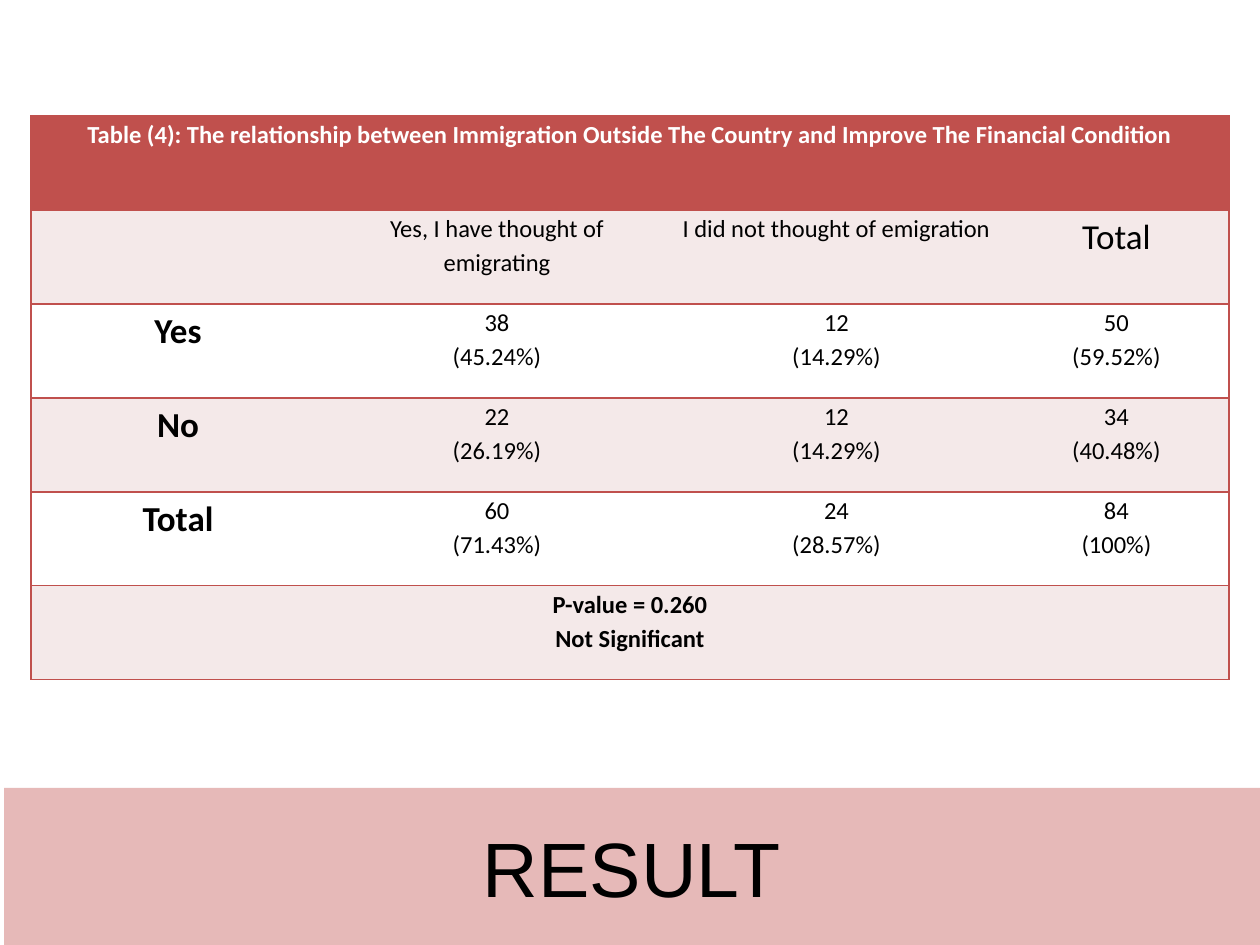
from lxml import etree
from pptx import Presentation
from pptx.dml.color import RGBColor
from pptx.enum.shapes import MSO_SHAPE
from pptx.enum.text import MSO_ANCHOR, PP_ALIGN
from pptx.oxml.ns import qn
from pptx.util import Emu, Pt

RECT = MSO_SHAPE.RECTANGLE
CENTER = PP_ALIGN.CENTER
MIDDLE = MSO_ANCHOR.MIDDLE

RED = RGBColor(0xC0, 0x50, 0x4D)
PINK = RGBColor(0xE6, 0xB9, 0xB8)
PALE = RGBColor(0xF4, 0xE9, 0xE9)
WHITE = RGBColor(0xFF, 0xFF, 0xFF)
BLACK = RGBColor(0x00, 0x00, 0x00)

PX_PER_INCH = 126
COL_WIDTHS = [294, 344, 335, 225]
ROW_HEIGHT = 94
CAPTION = ("Table (4): The relationship between Immigration Outside The Country "
           "and Improve The Financial Condition")
HEADINGS = ["", "Yes, I have thought of emigrating",
            "I did not thought of emigration", "Total"]
COUNTS = [
    ("Yes", ["38", "(45.24%)"], ["12", "(14.29%)"], ["50", "(59.52%)"]),
    ("No", ["22", "(26.19%)"], ["12", "(14.29%)"], ["34", "(40.48%)"]),
    ("Total", ["60", "(71.43%)"], ["24", "(28.57%)"], ["84", "(100%)"]),
]
VERDICT = ["P-value = 0.260", "Not Significant"]


def px(n):
    return Emu(round(n * 914400 / PX_PER_INCH))


class Deck:
    def __init__(self, width, height):
        self.prs = Presentation()
        self.prs.slide_width, self.prs.slide_height = px(width), px(height)
        self.s = self.prs.slides.add_slide(self.prs.slide_layouts[6])

    def add_text(self, tf, lines, size, color=BLACK, bold=False, font="Calibri", spacing=1.15):
        for i, line in enumerate(lines):
            p = tf.paragraphs[0] if i == 0 else tf.add_paragraph()
            p.alignment = CENTER
            p.line_spacing = spacing
            r = p.add_run()
            r.text = line
            r.font.name, r.font.size, r.font.bold = font, Pt(size), bold
            r.font.color.rgb = color

    def banner(self, x, y, w, h, text):
        sp = self.s.shapes.add_shape(RECT, px(x), px(y), px(w), px(h))
        sp.shadow.inherit = False
        sp.fill.solid()
        sp.fill.fore_color.rgb = PINK
        sp.line.fill.background()
        sp.text_frame.vertical_anchor = MIDDLE
        self.add_text(sp.text_frame, [text], 44, font="Arial", spacing=1.0)

    def table(self, x, y, rows, col_widths, row_height):
        shape = self.s.shapes.add_table(len(rows), len(col_widths), px(x), px(y),
                                        px(sum(col_widths)), px(row_height * len(rows)))
        table = shape.table
        for col, width in zip(table.columns, col_widths):
            col.width = px(width)
        last = len(col_widths) - 1
        for i, (row, cells) in enumerate(zip(table.rows, rows)):
            row.height = px(row_height)
            spans = len(cells) == 1
            fill = RED if i == 0 else PALE if i % 2 else WHITE
            for j, cell in enumerate(row.cells):
                self.style_cell(cell, fill, left=spans or j == 0, right=spans or j == last)
            if spans:
                table.cell(i, 0).merge(table.cell(i, last))
            for cell, (lines, size, bold) in zip(row.cells, cells):
                self.add_text(cell.text_frame, lines, size, WHITE if i == 0 else BLACK, bold)

    def style_cell(self, cell, fill, left, right):
        cell.margin_left = cell.margin_right = px(9)
        cell.margin_top = cell.margin_bottom = 0
        cell.fill.solid()
        cell.fill.fore_color.rgb = fill
        tc_pr = cell._tc.get_or_add_tcPr()
        sides = [("a:lnL", left), ("a:lnR", right), ("a:lnT", True), ("a:lnB", True)]
        for k, (tag, shown) in enumerate(sides):
            ln = etree.Element(qn(tag), w=str(Pt(1)))
            tc_pr.insert(k, ln)
            if shown:
                solid = etree.SubElement(ln, qn("a:solidFill"))
                etree.SubElement(solid, qn("a:srgbClr"), val=str(RED))
            else:
                etree.SubElement(ln, qn("a:noFill"))

    def save(self):
        self.prs.save("out.pptx")


def main():
    rows = [[([CAPTION], 14, True)]]
    rows.append([([text] if text else [], 20 if text == "Total" else 14, False)
                 for text in HEADINGS])
    for label, *values in COUNTS:
        rows.append([([label], 20, True)] + [(lines, 14, False) for lines in values])
    rows.append([(VERDICT, 14, True)])

    deck = Deck(1260, 945)
    deck.banner(4, 788, 1256, 157, "RESULT")
    deck.table(31, 116, rows, COL_WIDTHS, ROW_HEIGHT)
    deck.save()


if __name__ == "__main__":
    main()
